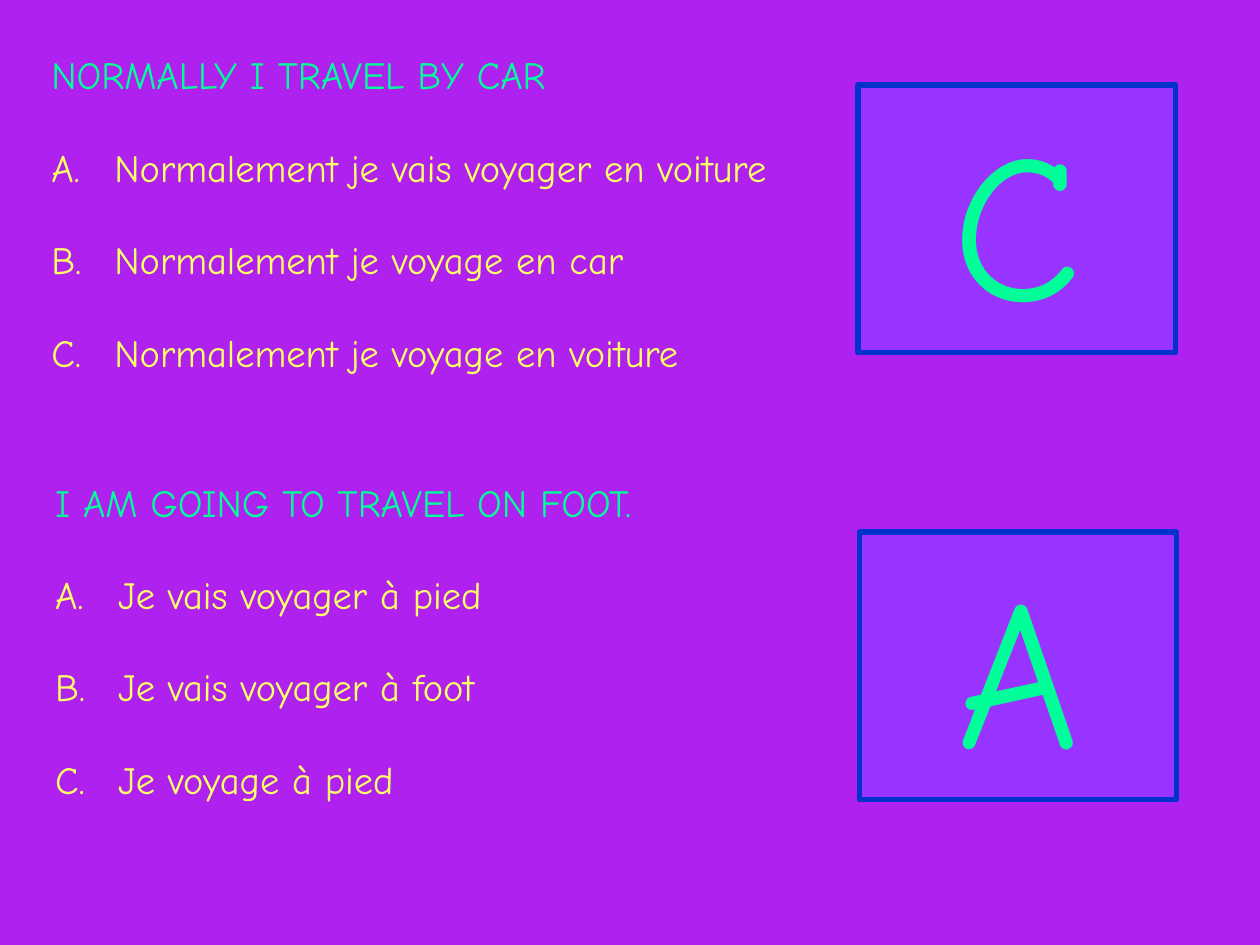
from dataclasses import dataclass

from lxml.etree import SubElement
from pptx import Presentation
from pptx.dml.color import RGBColor as RGB
from pptx.enum.shapes import MSO_SHAPE as Shape
from pptx.enum.text import MSO_ANCHOR as Anchor, PP_ALIGN as Align
from pptx.oxml.ns import qn
from pptx.util import Inches, Pt


@dataclass(frozen=True)
class Theme:
    font: str = "Comic Neue"
    background: RGB = RGB(0xAF, 0x21, 0xEF)
    card: RGB = RGB(0x99, 0x33, 0xFF)
    border: RGB = RGB(0x00, 0x33, 0xCC)
    accent: RGB = RGB(0x00, 0xFF, 0x99)
    option: RGB = RGB(0xFF, 0xFF, 0x66)
    text_size: float = 22
    answer_size: float = 120
    gap: float = 26.4  # one empty line between paragraphs


THEME = Theme()
WIDTH, HEIGHT = Inches(10), Inches(7.5)
CARD_SIZE = 0.252, 0.283

# Places are shares of the slide's width and height
QUESTIONS = [
    {
        "prompt": "NORMALLY I TRAVEL BY CAR",
        "options": ["Normalement je vais voyager en voiture",
                    "Normalement je voyage en car",
                    "Normalement je voyage en voiture"],
        "answer": "C",
        "text_box": (0.031, 0.048, 0.651, 0.408),
        "card_at": (0.681, 0.09),
    },
    {
        "prompt": "I AM GOING TO TRAVEL ON FOOT.",
        "options": ["Je vais voyager à pied",
                    "Je vais voyager à foot",
                    "Je voyage à pied"],
        "answer": "A",
        "text_box": (0.034, 0.5, 0.734, 0.457),
        "card_at": (0.682, 0.563),
    },
]


def place(left, top, width, height):
    """Turn shares of the slide into lengths."""
    return (int(left * WIDTH), int(top * HEIGHT),
            int(width * WIDTH), int(height * HEIGHT))


def style(p, size, color):
    for r in p.runs:
        r.font.name = THEME.font
        r.font.size = Pt(size)
        r.font.color.rgb = color


def number_with_letter(p):
    """Give the paragraph an automatic A. B. C. label and hanging indent."""
    props = p._p.get_or_add_pPr()
    props.set("marL", str(Inches(0.5)))
    props.set("indent", str(-Inches(0.5)))
    SubElement(props, qn("a:buFont"), typeface=THEME.font)
    SubElement(props, qn("a:buAutoNum"), type="alphaUcPeriod")


def add_question(s, prompt, options, box):
    tf = s.shapes.add_textbox(*place(*box)).text_frame
    tf.word_wrap = True
    tf.text = prompt
    style(tf.paragraphs[0], THEME.text_size, THEME.accent)
    for option in options:
        p = tf.add_paragraph()
        p.text = option
        p.space_before = Pt(THEME.gap)
        number_with_letter(p)
        style(p, THEME.text_size, THEME.option)


def add_answer_card(s, letter, position):
    sp = s.shapes.add_shape(Shape.RECTANGLE, *place(*position, *CARD_SIZE))
    sp.shadow.inherit = False
    sp.fill.solid()
    sp.fill.fore_color.rgb = THEME.card
    sp.line.color.rgb = THEME.border
    sp.line.width = Pt(3)
    tf = sp.text_frame
    tf.word_wrap = True
    tf.vertical_anchor = Anchor.TOP
    tf.text = letter
    p = tf.paragraphs[0]
    p.alignment = Align.CENTER
    style(p, THEME.answer_size, THEME.accent)


def main():
    prs = Presentation()
    prs.slide_width, prs.slide_height = WIDTH, HEIGHT
    s = prs.slides.add_slide(prs.slide_layouts[6])

    # Background
    s.background.fill.solid()
    s.background.fill.fore_color.rgb = THEME.background

    # Each question with its answer card
    for q in QUESTIONS:
        add_question(s, q["prompt"], q["options"], q["text_box"])
        add_answer_card(s, q["answer"], q["card_at"])

    prs.save("out.pptx")


if __name__ == "__main__":
    main()
